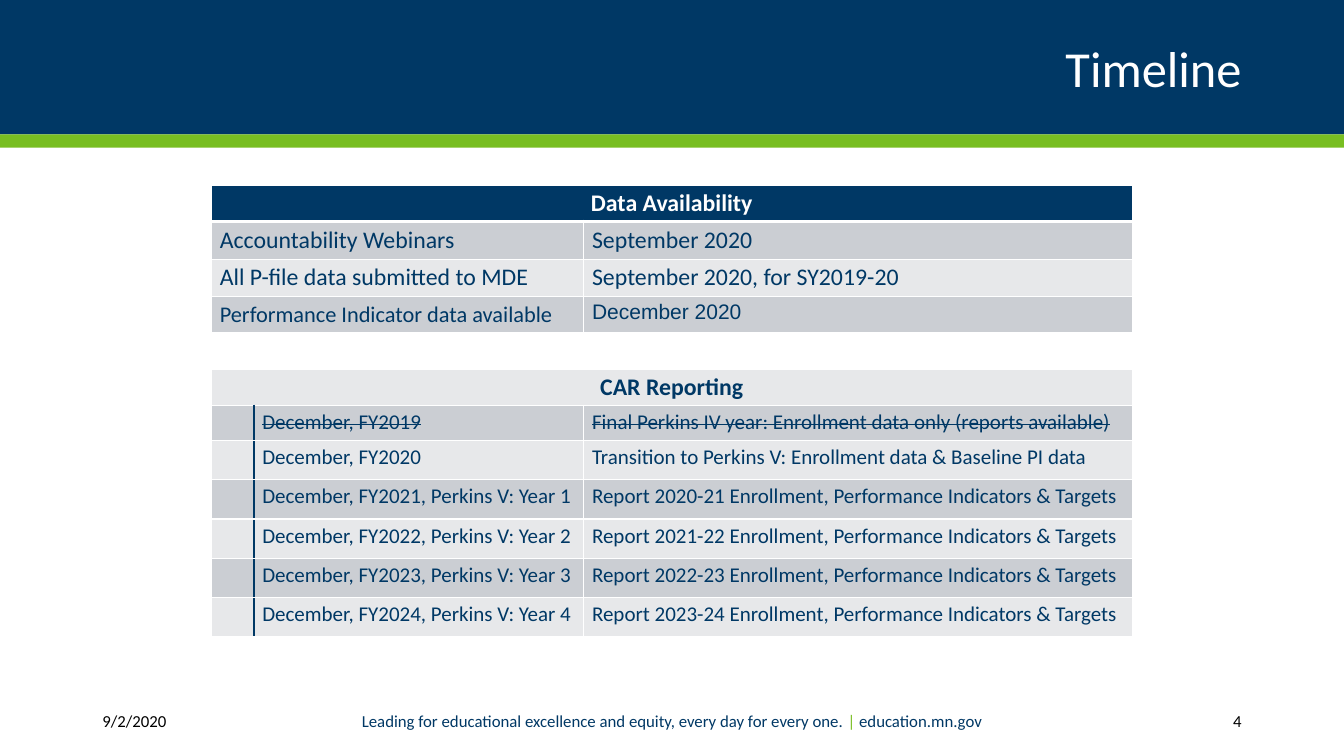
import pptx
import pptx.util
import pptx.dml.color
import pptx.enum.shapes
import pptx.enum.text
from dataclasses import dataclass
from lxml import etree
from pptx.util import Cm

ALIGN = pptx.enum.text.PP_ALIGN
ANCHOR = pptx.enum.text.MSO_ANCHOR
DRAWING = "{http://schemas.openxmlformats.org/drawingml/2006/main}"


@dataclass(frozen=True)
class Theme:
    navy: str = "003865"
    green: str = "78BE21"
    white: str = "FFFFFF"
    black: str = "000000"
    dark_band: str = "CBCED3"
    light_band: str = "E7E8EA"
    font: str = "Calibri"
    title: float = 36
    heading: float = 17
    indicator: float = 16
    body: float = 15
    footer: float = 12


THEME = Theme()
COLUMN_WIDTHS = (1.07, 8.31, 13.82)
AVAILABILITY = [
    # event, date, event format, date format, row height
    ("Accountability Webinars", "September 2020", {}, {}, 0.95),
    ("All P-file data submitted to MDE", "September 2020, for SY2019-20", {}, {}, 0.95),
    ("Performance Indicator data available", "December 2020",
     {"size": THEME.indicator}, {"size": THEME.body, "name": "Arial"}, 0.91),
]
REPORTING = [
    ("December, FY2019", "Final Perkins IV year: Enrollment data only (reports available)"),
    ("December, FY2020", "Transition to Perkins V: Enrollment data & Baseline PI data"),
] + [
    (f"December, FY{2020 + year}, Perkins V: Year {year}",
     f"Report {2019 + year}-{20 + year} Enrollment, Performance Indicators & Targets")
    for year in range(1, 5)
]


def rgb(color):
    return pptx.dml.color.RGBColor.from_string(color)


def add_run(paragraph, text, size, color, strike=False, **formats):
    run = paragraph.add_run()
    run.text = text
    values = {"name": THEME.font, "size": pptx.util.Pt(size), **formats}
    for name, value in values.items():
        setattr(run.font, name, value)
    run.font.color.rgb = rgb(color)
    if strike:
        run.font._element.set("strike", "sngStrike")


def add_band(slide, top, height, color):
    band = slide.shapes.add_shape(pptx.enum.shapes.MSO_SHAPE.RECTANGLE,
                                  0, Cm(top), Cm(33.87), Cm(height))
    band.shadow.inherit = False
    band.fill.solid()
    band.fill.fore_color.rgb = rgb(color)
    band.line.fill.background()


def add_text(slide, box, pieces, size, alignment):
    """Place one line made of (text, color) pieces."""
    shape = slide.shapes.add_textbox(*map(Cm, box))
    frame = shape.text_frame
    for name, value in {"word_wrap": True, "vertical_anchor": ANCHOR.MIDDLE}.items():
        setattr(frame, name, value)
    paragraph = frame.paragraphs[0]
    paragraph.alignment = alignment
    for text, color in pieces:
        add_run(paragraph, text, size, color)


def set_border(cell, side, color, width):
    line = etree.SubElement(cell._tc.get_or_add_tcPr(), f"{DRAWING}ln{side}",
                            w=str(pptx.util.Pt(width)))
    fill = etree.SubElement(line, f"{DRAWING}solidFill")
    etree.SubElement(fill, f"{DRAWING}srgbClr", val=color)


def style_cell(cell, fill, borders):
    margins = {"margin_left": 0.21, "margin_right": 0.21,
               "margin_top": 0.1, "margin_bottom": 0.05}
    for name, value in margins.items():
        setattr(cell, name, Cm(value))
    for side in "LRTB":
        color, width = borders.get(side, (THEME.white, 1))
        set_border(cell, side, color, width)
    if fill:
        cell.fill.solid()
        cell.fill.fore_color.rgb = rgb(fill)
    else:
        cell.fill.background()


def fill_cell(cell, text, size=THEME.body, color=THEME.navy, alignment=ALIGN.LEFT, **formats):
    paragraph = cell.text_frame.paragraphs[0]
    paragraph.alignment = alignment
    add_run(paragraph, text, size, color, **formats)


def style_row(table, row, height, fill, borders=None, merge_to=0):
    """Set height, fill and borders of a row; borders are given per column."""
    table.rows[row].height = Cm(height)
    for column in range(len(COLUMN_WIDTHS)):
        cell = table.cell(row, column)
        style_cell(cell, fill, (borders or {}).get(column, {}))
        # Keep empty cells from stretching the row
        etree.SubElement(cell.text_frame.paragraphs[0]._p, f"{DRAWING}endParaRPr",
                         sz=str(100 * THEME.footer))
    if merge_to:
        table.cell(row, 0).merge(table.cell(row, merge_to))


def add_heading(table, row, text, fill, color, borders=None):
    style_row(table, row, 0.91, fill, borders, merge_to=2)
    fill_cell(table.cell(row, 0), text, THEME.heading, color, ALIGN.CENTER, bold=True)


def add_timeline(slide):
    row_count = len(AVAILABILITY) + len(REPORTING) + 3
    frame = slide.shapes.add_table(row_count, 3, Cm(5.33), Cm(4.67),
                                   Cm(sum(COLUMN_WIDTHS)), Cm(11.37))
    table = frame.table
    for name in ("first_row", "horz_banding"):
        setattr(table, name, False)
    for column, width in zip(table.columns, COLUMN_WIDTHS):
        column.width = Cm(width)
    bands = (THEME.dark_band, THEME.light_band)
    thick = (THEME.white, 3)

    # Data availability
    add_heading(table, 0, "Data Availability", THEME.navy, THEME.white,
                {column: {"B": thick} for column in range(3)})
    for row, (event, date, event_format, date_format, height) in enumerate(AVAILABILITY, 1):
        borders = {column: {"T": thick} for column in range(3)} if row == 1 else None
        style_row(table, row, height, bands[(row - 1) % 2], borders, merge_to=1)
        fill_cell(table.cell(row, 0), event, **{"size": THEME.heading, **event_format})
        fill_cell(table.cell(row, 2), date, **{"size": THEME.heading, **date_format})

    # Gap between the two parts
    gap = len(AVAILABILITY) + 1
    style_row(table, gap, 0.91, None, merge_to=1)

    # Reporting years, with a navy rule after the indent column
    add_heading(table, gap + 1, "CAR Reporting", THEME.light_band, THEME.navy)
    rule = (THEME.navy, 1)
    for index, (due, report) in enumerate(REPORTING):
        row = gap + 2 + index
        done = index == 0
        style_row(table, row, 0.89 if done else 0.99, bands[index % 2],
                  {0: {"R": rule}, 1: {"L": rule}})
        fill_cell(table.cell(row, 1), due, strike=done)
        fill_cell(table.cell(row, 2), report, strike=done)


def main():
    presentation = pptx.Presentation()
    presentation.slide_width = Cm(33.87)
    presentation.slide_height = Cm(19.05)
    slide = presentation.slides.add_slide(presentation.slide_layouts[6])

    # Header
    add_band(slide, 0, 3.39, THEME.navy)
    add_band(slide, 3.39, 0.33, THEME.green)
    add_text(slide, (2.33, 0.42, 29.21, 2.54), [("Timeline", THEME.white)],
             THEME.title, ALIGN.RIGHT)

    add_timeline(slide)

    # Footer
    footers = [
        (2.33, 3.79, ALIGN.LEFT, [("9/2/2020", THEME.black)]),
        (8.02, 17.83, ALIGN.CENTER, [
            ("Leading for educational excellence and equity, every day for every one. ", THEME.navy),
            ("| ", THEME.green),
            ("education.mn.gov", THEME.navy)]),
        (27.48, 4.06, ALIGN.RIGHT, [("4", THEME.black)]),
    ]
    for left, width, alignment, pieces in footers:
        add_text(slide, (left, 17.65, width, 1.02), pieces, THEME.footer, alignment)

    presentation.save("out.pptx")


if __name__ == "__main__":
    main()
